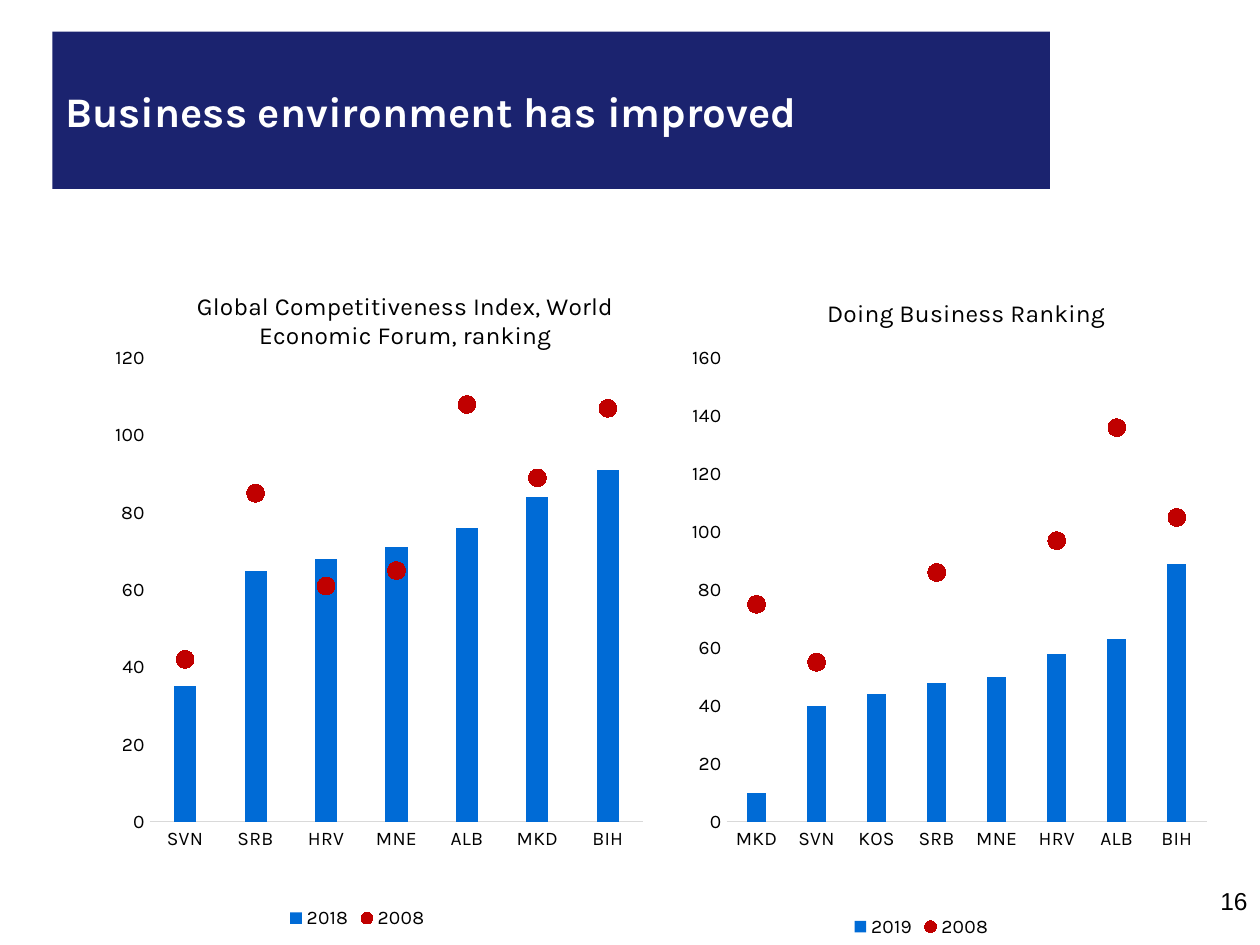
from pptx import Presentation
from pptx.chart.data import CategoryChartData
from pptx.dml.color import RGBColor
from pptx.enum.chart import XL_CHART_TYPE, XL_LEGEND_POSITION, XL_MARKER_STYLE, XL_TICK_MARK
from pptx.enum.shapes import MSO_SHAPE
from pptx.enum.text import MSO_ANCHOR, PP_ALIGN
from pptx.oxml import parse_xml
from pptx.oxml.ns import nsdecls, qn
from pptx.util import Pt

NAVY = RGBColor(0x1B, 0x23, 0x6F)
BLUE = RGBColor(0x00, 0x6B, 0xD6)
RED = RGBColor(0xC0, 0x00, 0x00)
GREY = RGBColor(0xD9, 0xD9, 0xD9)
BLACK = RGBColor(0, 0, 0)
WHITE = RGBColor(0xFF, 0xFF, 0xFF)


def style(font, color, **values):
    for key, value in values.items():
        setattr(font, key, value)
    font.color.rgb = color


def add_title(slide, box, text):
    title = slide.shapes.title
    banner = slide.shapes.add_shape(MSO_SHAPE.RECTANGLE, *box)
    banner.shadow.inherit = False
    banner.fill.solid()
    banner.fill.fore_color.rgb = NAVY
    banner.line.fill.background()
    title.element.addprevious(banner.element)
    title.left, title.top, title.width, title.height = box
    frame = title.text_frame
    frame.text = text
    frame.vertical_anchor = MSO_ANCHOR.MIDDLE
    head = frame.paragraphs[0]
    head.alignment = PP_ALIGN.LEFT
    style(head.runs[0].font, WHITE, name="Karla", size=Pt(24), bold=True)


def add_number(slide, box, text):
    frame = slide.shapes.add_textbox(*box).text_frame
    frame.word_wrap = True
    frame.text = text
    line = frame.paragraphs[0]
    line.alignment = PP_ALIGN.RIGHT
    style(line.runs[0].font, BLACK, name="Arial", size=Pt(14))


def set_layout(part, index, place, target=""):
    for old in part.findall(qn("c:layout")):
        part.remove(old)
    inner = f'<c:layoutTarget val="{target}"/>' if target else ""
    inner += "".join(f'<c:{key}Mode val="edge"/>' for key in "xy")
    inner += "".join(f'<c:{key} val="{value}"/>' for key, value in zip("xywh", place))
    part.insert(index, parse_xml(
        f'<c:layout {nsdecls("c")}><c:manualLayout>{inner}</c:manualLayout></c:layout>'))


def split_line(area):
    bars = area.find(qn("c:barChart"))
    series = bars.findall(qn("c:ser"))[1]
    for flag in series.findall(qn("c:invertIfNegative")):
        series.remove(flag)
    axes = "".join(f'<c:axId val="{axis.get("val")}"/>' for axis in bars.findall(qn("c:axId")))
    lines = parse_xml(
        f'<c:lineChart {nsdecls("c")}><c:grouping val="standard"/>'
        f'<c:varyColors val="0"/><c:marker val="1"/>{axes}</c:lineChart>')
    lines.insert(2, series)
    bars.addnext(lines)


def add_ranking(slide, box, title, cats, series, top, spots):
    data = CategoryChartData(number_format="General")
    data.categories = cats
    for name, values in series:
        data.add_series(name, values)
    chart = slide.shapes.add_chart(XL_CHART_TYPE.COLUMN_CLUSTERED, *box, data).chart
    style(chart.font, BLACK, name="Karla", size=Pt(11))

    chart.has_title = True
    chart.chart_title.text_frame.text = title
    run = chart.chart_title.text_frame.paragraphs[0].runs[0]
    style(run.font, BLACK, name="Karla", size=Pt(14), bold=False)
    chart.has_legend = True
    chart.legend.position = XL_LEGEND_POSITION.BOTTOM
    chart.legend.include_in_layout = False
    style(chart.legend.font, BLACK, name="Karla", size=Pt(11))

    root = chart.element.find(qn("c:chart"))
    area = root.find(qn("c:plotArea"))
    split_line(area)
    set_layout(area, 0, spots["plot"], "inner")
    for part in ("title", "legend"):
        set_layout(root.find(qn(f"c:{part}")), 1, spots[part])

    bars, dots = chart.plots
    bars.gap_width, bars.overlap, bars.vary_by_categories = 219, -27, False
    bars.series[0].format.fill.solid()
    bars.series[0].format.fill.fore_color.rgb = BLUE
    dot = dots.series[0]
    dot.smooth = False
    dot.format.line.fill.background()
    dot.marker.style, dot.marker.size = XL_MARKER_STYLE.CIRCLE, 10
    dot.marker.format.fill.solid()
    dot.marker.format.fill.fore_color.rgb = RED
    dot.marker.format.line.fill.background()

    for axis in (chart.category_axis, chart.value_axis):
        axis.major_tick_mark = axis.minor_tick_mark = XL_TICK_MARK.NONE
        axis.has_major_gridlines = False
        style(axis.tick_labels.font, BLACK, name="Karla", size=Pt(11))
    chart.category_axis.format.line.color.rgb = GREY
    chart.category_axis.format.line.width = Pt(0.75)
    scale = chart.value_axis
    scale.format.line.fill.background()
    scale.minimum_scale, scale.maximum_scale, scale.major_unit = 0, top, 20


def main():
    deck = Presentation()
    deck.slide_width, deck.slide_height = Pt(720), Pt(540)
    slide = deck.slides.add_slide(deck.slide_layouts[5])
    add_title(slide, (Pt(30), Pt(18), Pt(570), Pt(90)), "Business environment has improved")
    add_number(slide, (Pt(552), Pt(502.5), Pt(168), Pt(37.5)), "16")
    add_ranking(
        slide, (Pt(30), Pt(126), Pt(348), Pt(414)),
        "Global Competitiveness Index, World Economic Forum, ranking",
        ["SVN", "SRB", "HRV", "MNE", "ALB", "MKD", "BIH"],
        [("2018", [35, 65, 68, 71, 76, 84, 91]),
         ("2008", [42, 85, 61, 65, 108, 89, 107])], 120,
        {"plot": (0.16, 0.19, 0.81, 0.64), "title": (0.23, 0.09), "legend": (0.38, 0.94)})
    add_ranking(
        slide, (Pt(342), Pt(126), Pt(366), Pt(414)),
        "Doing Business Ranking",
        ["MKD", "SVN", "KOS", "SRB", "MNE", "HRV", "ALB", "BIH"],
        [("2019", [10, 40, 44, 48, 50, 58, 63, 89]),
         ("2008", [75, 55, None, 86, None, 97, 136, 105])], 160,
        {"plot": (0.2, 0.19, 0.75, 0.64), "title": (0.35, 0.1), "legend": (0.39, 0.96)})
    deck.save("out.pptx")


if __name__ == "__main__":
    main()
